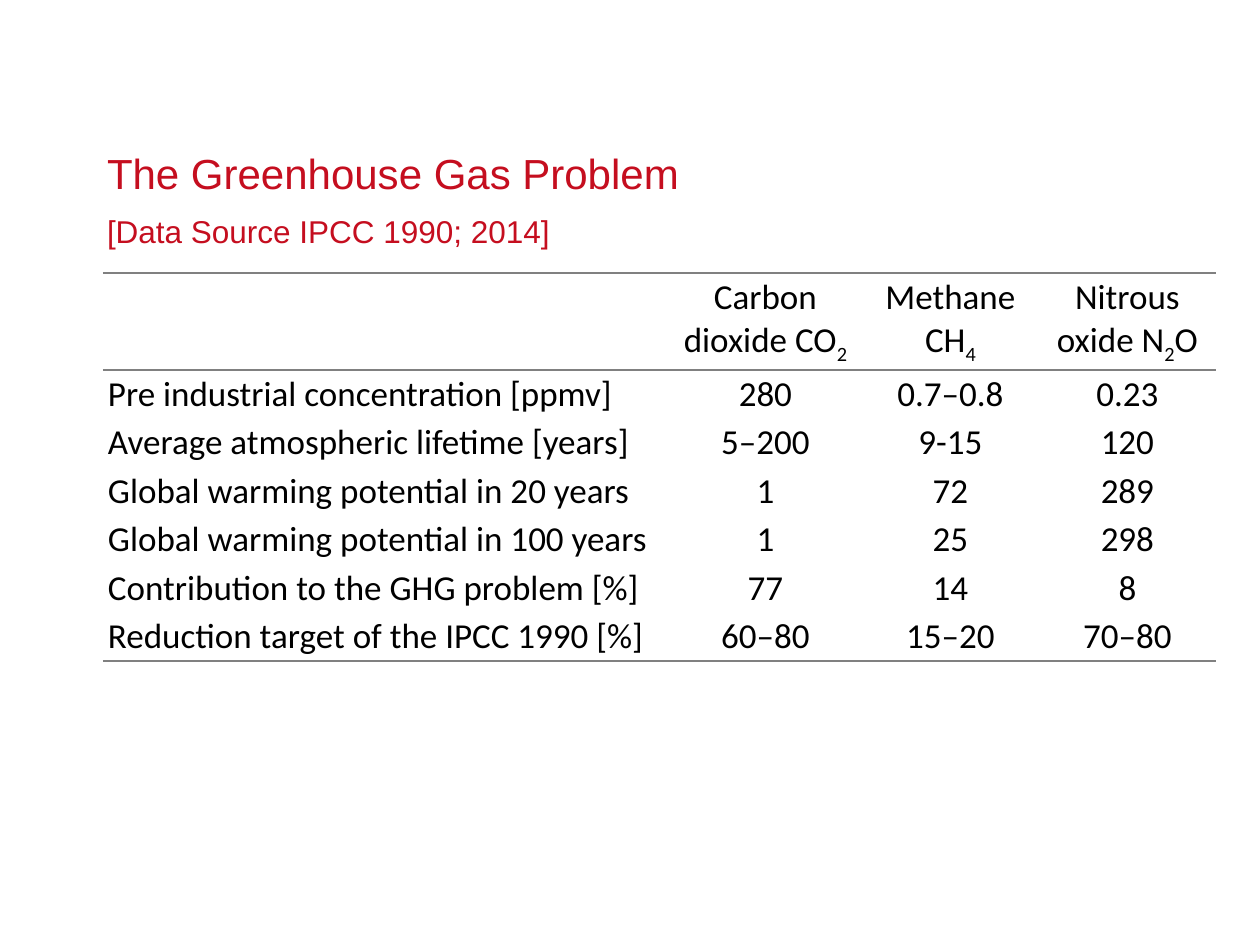
from lxml.etree import SubElement
from pptx import Presentation
from pptx.dml.color import RGBColor
from pptx.enum.text import MSO_ANCHOR, PP_ALIGN
from pptx.oxml.ns import qn
from pptx.util import Emu, Pt

PX = 914400 // 126
RED = RGBColor(0xC5, 0x0E, 0x1F)
BLACK = RGBColor(0, 0, 0)
GRAY = RGBColor(0x80, 0x80, 0x80)


def px(n):
    return Emu(n * PX)


def set_border(cell, side, width):
    """Draw one cell edge, or clear it when width is 0."""
    line = SubElement(cell._tc.get_or_add_tcPr(), qn(f"a:ln{side}"), w=str(Pt(width)))
    if width:
        fill = SubElement(line, qn("a:solidFill"))
        SubElement(fill, qn("a:srgbClr"), val=str(GRAY))
    else:
        SubElement(line, qn("a:noFill"))


prs = Presentation()
prs.slide_width, prs.slide_height = px(1260), px(945)
slide = prs.slides.add_slide(prs.slide_layouts[6])

# Title and data source
frame = slide.shapes.add_textbox(px(107), px(96), px(892), px(154)).text_frame
frame.word_wrap = True
frame.vertical_anchor = MSO_ANCHOR.BOTTOM
frame.margin_left = frame.margin_right = frame.margin_top = frame.margin_bottom = 0
title = frame.paragraphs[0]
title.line_spacing = Pt(30)
title.font.name = "Arial"
title.font.color.rgb = RED
heading = title.add_run()
heading.text = "The Greenhouse Gas Problem"
heading.font.size = Pt(24)
title.add_line_break()
source = title.add_run()
source.text = "[Data Source IPCC 1990; 2014]"
source.font.size = Pt(18)

# Table content; "_" marks the start and end of a subscript
GASES = [
    ("", "Carbon dioxide CO_2", "Methane CH_4", "Nitrous oxide N_2_O"),
    ("Pre industrial concentration [ppmv]", "280", "0.7–0.8", "0.23"),
    ("Average atmospheric lifetime [years]", "5–200", "9-15", "120"),
    ("Global warming potential in 20 years", "1", "72", "289"),
    ("Global warming potential in 100 years", "1", "25", "298"),
    ("Contribution to the GHG problem [%]", "77", "14", "8"),
    ("Reduction target of the IPCC 1990 [%]", "60–80", "15–20", "70–80"),
]
COLUMN_WIDTHS = [566, 193, 177, 177]
ROW_HEIGHTS = [97] + [49, 48] * 3
LAST = len(GASES) - 1

table = slide.shapes.add_table(
    len(GASES), len(COLUMN_WIDTHS), px(103), px(273),
    px(sum(COLUMN_WIDTHS)), px(sum(ROW_HEIGHTS))).table
table.first_row = table.horz_banding = False
for column, width in zip(table.columns, COLUMN_WIDTHS):
    column.width = px(width)
for row, height in zip(table.rows, ROW_HEIGHTS):
    row.height = px(height)

# Cells, ruled above and below the header and below the last row
for r, values in enumerate(GASES):
    top = {0: 1.5, 1: 1}.get(r, 0)
    bottom = {0: 1, LAST: 1.5}.get(r, 0)
    for c, value in enumerate(values):
        cell = table.cell(r, c)
        cell.margin_left = cell.margin_right = px(5)
        cell.margin_top = cell.margin_bottom = 0
        cell.vertical_anchor = MSO_ANCHOR.MIDDLE
        for side, width in zip("LRTB", (0, 0, top, bottom)):
            set_border(cell, side, width)
        cell.fill.background()
        entry = cell.text_frame.paragraphs[0]
        entry.alignment = PP_ALIGN.CENTER if c else PP_ALIGN.JUSTIFY
        entry.font.name = "Calibri"
        entry.font.size = Pt(20)
        entry.font.color.rgb = BLACK
        for i, part in enumerate(value.split("_")):
            run = entry.add_run()
            run.text = part
            if i % 2:
                run._r.get_or_add_rPr().set("baseline", "-25000")

prs.save("out.pptx")
